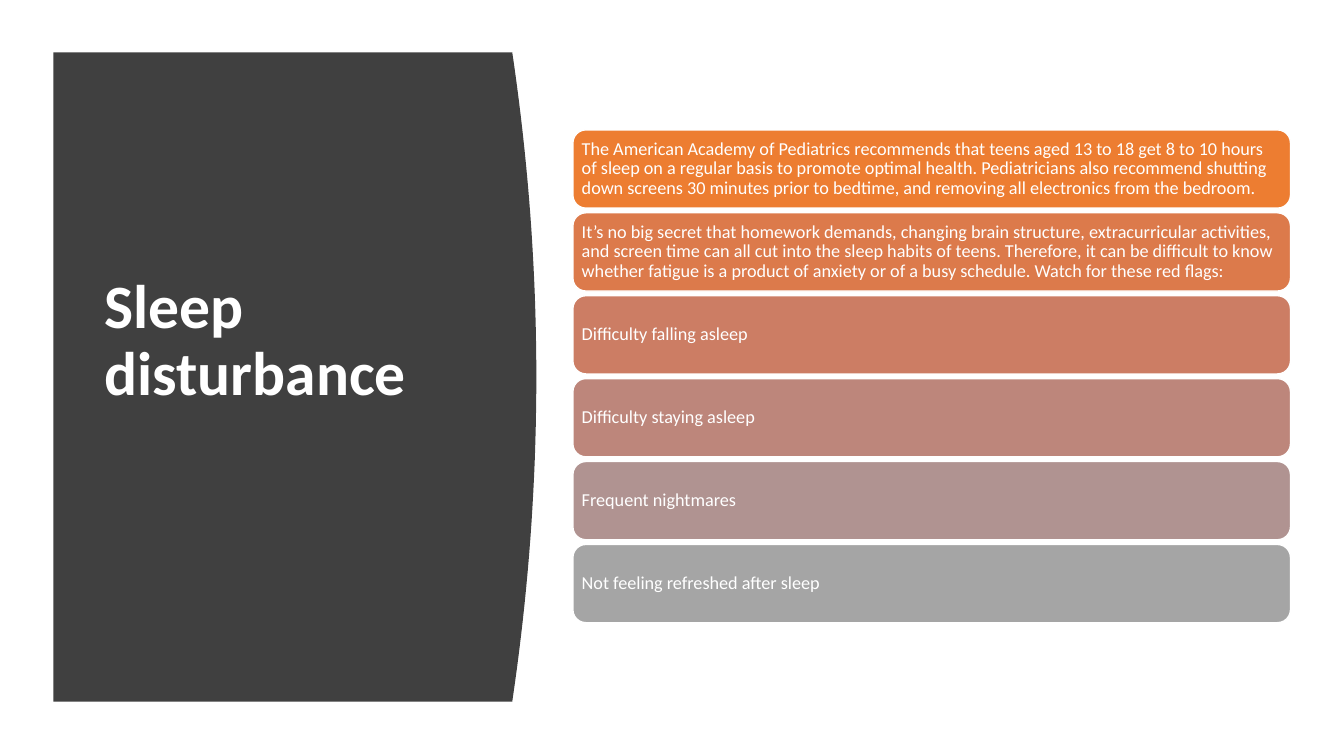
from dataclasses import dataclass
from typing import Any

from pptx import Presentation
from pptx.dml.color import RGBColor
from pptx.enum.shapes import MSO_SHAPE
from pptx.enum.text import MSO_ANCHOR, PP_ALIGN
from pptx.util import Pt


@dataclass(frozen=True)
class Theme:
    font: str = "Calibri"
    title_size: float = 44
    card_size: float = 13
    line_spacing: float = 0.9
    white: str = "FFFFFF"
    panel: str = "404040"


@dataclass(frozen=True)
class Frame:
    left: float
    top: float
    width: float
    height: float

    def lengths(self) -> list[Pt]:
        return [Pt(self.left), Pt(self.top), Pt(self.width), Pt(self.height)]


@dataclass(frozen=True)
class Card:
    fill: str
    text: str


THEME = Theme()
PANEL = Frame(38.2, 37.4, 344.9, 463.8)
PANEL_BULGE = 17.2
PANEL_STEPS = 40
TITLE = Frame(67.68, 79.92, 269.28, 377.28)
FIRST_CARD = Frame(409.2, 92.8, 512.6, 55.9)
CARD_PITCH = 59.22

CARDS = [
    Card("ED7D31", "The American Academy of Pediatrics recommends that teens aged 13 to 18 "
         "get 8 to 10 hours of sleep on a regular basis to promote optimal health. "
         "Pediatricians also recommend shutting down screens 30 minutes prior to bedtime, "
         "and removing all electronics from the bedroom."),
    Card("DC7A4B", "It’s no big secret that homework demands, changing brain structure, "
         "extracurricular activities, and screen time can all cut into the sleep habits of "
         "teens. Therefore, it can be difficult to know whether fatigue is a product of "
         "anxiety or of a busy schedule. Watch for these red flags:"),
    Card("CC7D64", "Difficulty falling asleep"),
    Card("BD867B", "Difficulty staying asleep"),
    Card("B09391", "Frequent nightmares"),
    Card("A5A5A5", "Not feeling refreshed after sleep"),
]


def apply_format(target: Any, values: dict[str, Any]) -> None:
    for name, value in values.items():
        setattr(target, name, value)


def paint(shape: Any, color: str) -> None:
    shape.shadow.inherit = False
    shape.fill.solid()
    shape.fill.fore_color.rgb = RGBColor.from_string(color)


def write(box: Any, text: str, size: float, bold: bool, margins: dict[str, Any]) -> None:
    frame = box.text_frame
    apply_format(frame, {"word_wrap": True, "vertical_anchor": MSO_ANCHOR.MIDDLE, **margins})
    para = frame.paragraphs[0]
    apply_format(para, {"alignment": PP_ALIGN.LEFT, "line_spacing": THEME.line_spacing})
    span = para.add_run()
    span.text = text
    apply_format(span.font, {"name": THEME.font, "size": Pt(size), "bold": bold})
    span.font.color.rgb = RGBColor.from_string(THEME.white)


def draw_panel(page: Any) -> None:
    """Dark panel whose right edge bows outward as a parabola."""
    right, bottom = PANEL.left + PANEL.width, PANEL.top + PANEL.height
    edge = []
    for step in range(PANEL_STEPS + 1):
        share = step / PANEL_STEPS
        inset = PANEL_BULGE * (2 * share - 1) ** 2
        edge.append((Pt(right - inset), Pt(PANEL.top + PANEL.height * share)))
    builder = page.shapes.build_freeform(Pt(PANEL.left), Pt(PANEL.top))
    builder.add_line_segments([*edge, (Pt(PANEL.left), Pt(bottom))], close=True)
    panel = builder.convert_to_shape()
    paint(panel, THEME.panel)
    panel.line.fill.background()


def draw_title(page: Any) -> None:
    box = page.shapes.add_textbox(*TITLE.lengths())
    # The deep bottom margin lifts the title above the middle
    write(box, "Sleep disturbance", THEME.title_size, True, {"margin_bottom": Pt(52)})


def draw_card(page: Any, card: Card, frame: Frame) -> None:
    box = page.shapes.add_shape(MSO_SHAPE.ROUNDED_RECTANGLE, *frame.lengths())
    paint(box, card.fill)
    box.line.color.rgb = RGBColor.from_string(THEME.white)
    box.line.width = Pt(1)
    margins = {f"margin_{side}": Pt(3.6) for side in ("left", "top", "right", "bottom")}
    write(box, card.text, THEME.card_size, False, margins)


def main() -> None:
    deck = Presentation()
    apply_format(deck, {"slide_width": Pt(960), "slide_height": Pt(540)})
    page = deck.slides.add_slide(deck.slide_layouts[6])

    # Left side: panel and title
    draw_panel(page)
    draw_title(page)

    # Right side: stack of cards
    for index, card in enumerate(CARDS):
        top = FIRST_CARD.top + index * CARD_PITCH
        draw_card(page, card, Frame(FIRST_CARD.left, top, FIRST_CARD.width, FIRST_CARD.height))

    deck.save("out.pptx")


if __name__ == "__main__":
    main()
